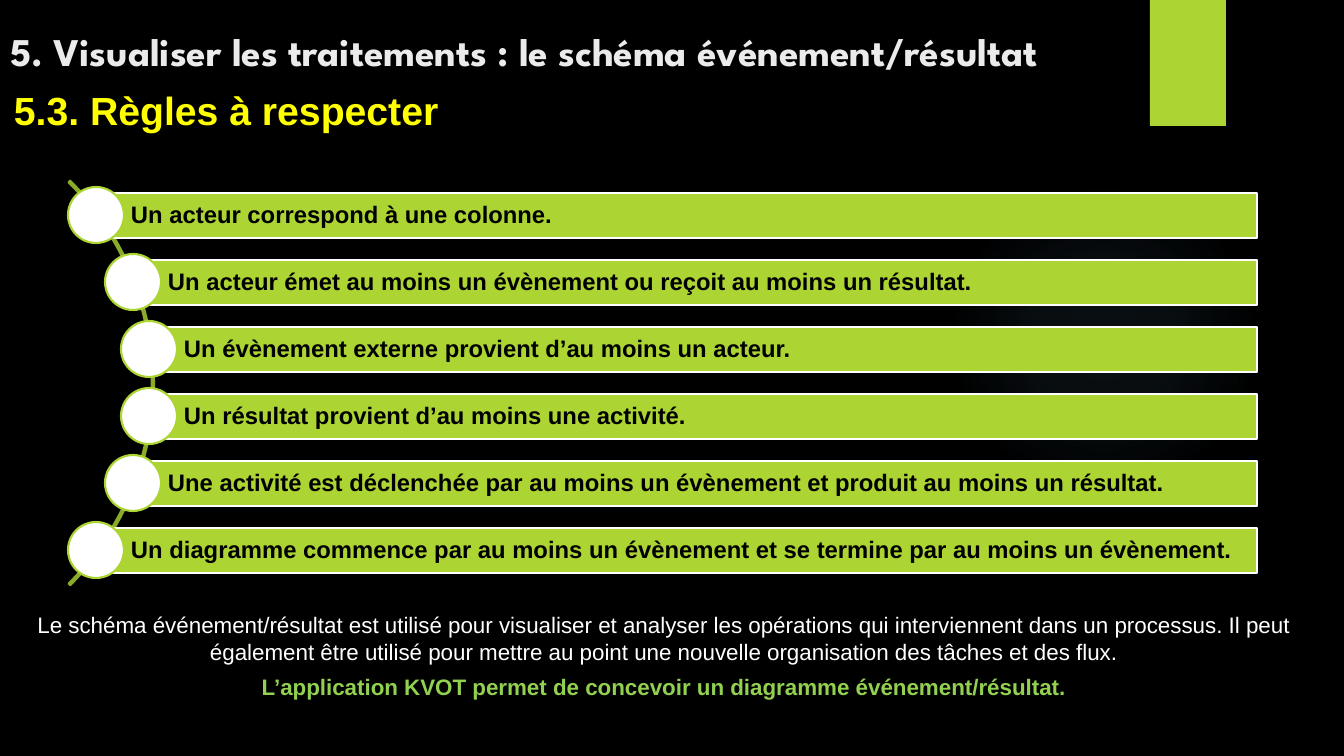
"""Build the slide on the rules of the event/result diagram."""
from dataclasses import dataclass
from math import sqrt

from lxml.etree import SubElement
from pptx import Presentation
from pptx.dml.color import RGBColor
from pptx.enum.shapes import MSO_SHAPE
from pptx.enum.text import MSO_ANCHOR, MSO_AUTO_SIZE, PP_ALIGN
from pptx.oxml.ns import qn
from pptx.util import Emu, Pt

SLIDE_WIDTH, SLIDE_HEIGHT = 1344, 756
EMU_PER_PX = 12192000 / SLIDE_WIDTH

RULES = (
    "Un acteur correspond à une colonne.",
    "Un acteur émet au moins un évènement ou reçoit au moins un résultat.",
    "Un évènement externe provient d’au moins un acteur.",
    "Un résultat provient d’au moins une activité.",
    "Une activité est déclenchée par au moins un évènement et produit au moins un résultat.",
    "Un diagramme commence par au moins un évènement et se termine par au moins un évènement.",
)
USAGE = (
    "Le schéma événement/résultat est utilisé pour visualiser et analyser les opérations "
    "qui interviennent dans un processus. Il peut également être utilisé pour mettre au point "
    "une nouvelle organisation des tâches et des flux."
)
TOOL = "L’application KVOT permet de concevoir un diagramme événement/résultat."


@dataclass(frozen=True)
class Theme:
    """Colours, fonts and type sizes of the slide."""
    black: RGBColor = RGBColor(0, 0, 0)
    white: RGBColor = RGBColor(255, 255, 255)
    title: RGBColor = RGBColor.from_string("EBEBEB")
    section: RGBColor = RGBColor.from_string("FFFF00")
    lime: RGBColor = RGBColor.from_string("ACD433")
    olive: RGBColor = RGBColor.from_string("8AAA29")
    green: RGBColor = RGBColor.from_string("92D050")
    glow: RGBColor = RGBColor.from_string("7AC4F0")
    display: str = "League Spartan"
    text: str = "Arial"
    heading_size: int = 28
    rule_size: int = 17
    note_size: int = 16
    line_width: float = 1.5


@dataclass(frozen=True)
class Box:
    """An area of the slide in px."""
    left: int
    top: int
    width: int
    height: int

    def emu(self):
        """Return the area as lengths in EMU."""
        return [px(n) for n in (self.left, self.top, self.width, self.height)]


THEME = Theme()


def px(length):
    """Turn px into EMU."""
    return Emu(round(length * EMU_PER_PX))


def place(shape, box):
    """Move a shape into a box."""
    shape.left, shape.top, shape.width, shape.height = box.emu()


def write(paragraph, text, size, color, name=THEME.text, bold=True):
    """Fill a paragraph and format it."""
    paragraph.text = text
    font = paragraph.font
    font.size, font.name, font.bold = Pt(size), name, bold
    font.color.rgb = color


def add_figure(slide, kind, box, fill=None, line=None):
    """Add a flat preset shape with an optional fill and line."""
    figure = slide.shapes.add_shape(kind, *box.emu())
    figure.shadow.inherit = False
    if fill is None:
        figure.fill.background()
    else:
        figure.fill.solid()
        figure.fill.fore_color.rgb = fill
    if line is None:
        figure.line.fill.background()
    else:
        figure.line.color.rgb = line
        figure.line.width = Pt(THEME.line_width)
    return figure


def add_glow(slide, box):
    """Add the faint radial glow behind the rules."""
    glow = add_figure(slide, MSO_SHAPE.OVAL, box)
    glow.fill.gradient()
    gradient = glow.fill._xPr.find(qn("a:gradFill"))
    for child in list(gradient):
        gradient.remove(child)
    stops = SubElement(gradient, qn("a:gsLst"))
    for position, alpha in ((0, 7), (36, 6), (69, 0)):
        stop = SubElement(stops, qn("a:gs"), pos=str(position * 1000))
        color = SubElement(stop, qn("a:srgbClr"), val=str(THEME.glow))
        SubElement(color, qn("a:alpha"), val=str(alpha * 1000))
    circle = SubElement(gradient, qn("a:path"), path="circle")
    SubElement(circle, qn("a:fillToRect"), l="50000", t="50000", r="50000", b="50000")


def add_headings(slide, box):
    """Place the chapter title and the section heading below it."""
    title = slide.shapes.title
    place(title, Box(box.left, box.top, box.width, 76))
    section = slide.shapes.add_textbox(
        *Box(box.left + 4, box.top + 78, box.width - 59, 57).emu())
    for heading, anchor in ((title, MSO_ANCHOR.BOTTOM), (section, MSO_ANCHOR.MIDDLE)):
        frame = heading.text_frame
        frame.word_wrap = True
        frame.auto_size = MSO_AUTO_SIZE.NONE
        frame.vertical_anchor = anchor
        frame.paragraphs[0].alignment = PP_ALIGN.LEFT
    write(title.text_frame.paragraphs[0],
          "5. Visualiser les traitements : le schéma événement/résultat",
          THEME.heading_size, THEME.title, THEME.display)
    write(section.text_frame.paragraphs[0], "5.3. Règles à respecter",
          THEME.heading_size, THEME.section)


def add_rule(slide, box, rule):
    """Add a bar with its rule and the disc centred on its left edge."""
    disc = 56
    bar = add_figure(slide, MSO_SHAPE.RECTANGLE, box, THEME.lime, THEME.white)
    frame = bar.text_frame
    frame.word_wrap = True
    frame.vertical_anchor = MSO_ANCHOR.MIDDLE
    frame.margin_left = px(35)
    frame.margin_top = frame.margin_right = frame.margin_bottom = px(5)
    paragraph = frame.paragraphs[0]
    paragraph.alignment = PP_ALIGN.LEFT
    paragraph.line_spacing = 0.9
    write(paragraph, rule, THEME.rule_size, THEME.black)
    disc_box = Box(box.left - disc // 2, box.top + (box.height - disc) // 2, disc, disc)
    add_figure(slide, MSO_SHAPE.OVAL, disc_box, THEME.white, THEME.lime)


def add_rules(slide, box):
    """Spread the rules evenly along an arc that bulges to the right."""
    radius, track, step, bar_height = 286, 283, 67, 45
    center_x = box.left - 200
    center_y = box.top + box.height // 2
    arc = add_figure(
        slide, MSO_SHAPE.BLOCK_ARC,
        Box(center_x - radius, center_y - radius, 2 * radius, 2 * radius),
        line=THEME.olive)
    for index, value in enumerate((189, 27, 0.004)):
        arc.adjustments[index] = value
    for index, rule in enumerate(RULES):
        offset = (index - (len(RULES) - 1) / 2) * step
        left = round(center_x + sqrt(track ** 2 - offset ** 2))
        top = round(center_y + offset - bar_height / 2)
        add_rule(slide, Box(left, top, box.left + box.width - left, bar_height), rule)


def add_notes_on_use(slide, box):
    """Fill the body with the closing remarks, centred and without bullets."""
    body = slide.placeholders[1]
    place(body, box)
    frame = body.text_frame
    frame.auto_size = MSO_AUTO_SIZE.NONE
    remarks = ((USAGE, THEME.white, False, 0), (TOOL, THEME.green, True, 6))
    for index, (text, color, bold, gap) in enumerate(remarks):
        paragraph = frame.add_paragraph() if index else frame.paragraphs[0]
        properties = paragraph._p.get_or_add_pPr()
        properties.set("marL", "0")
        properties.set("indent", "0")
        SubElement(properties, qn("a:buNone"))
        paragraph.alignment = PP_ALIGN.CENTER
        paragraph.space_before = Pt(gap)
        write(paragraph, text, THEME.note_size, color, bold=bold)


def main():
    """Build the slide and save it."""
    deck = Presentation()
    deck.slide_width, deck.slide_height = px(SLIDE_WIDTH), px(SLIDE_HEIGHT)
    slide = deck.slides.add_slide(deck.slide_layouts[1])
    slide.background.fill.solid()
    slide.background.fill.fore_color.rgb = THEME.black
    add_glow(slide, Box(949, 184, 310, 310))
    add_figure(slide, MSO_SHAPE.RECTANGLE, Box(1150, 0, 76, 126), THEME.lime)
    add_headings(slide, Box(0, 3, 1268, 135))
    add_rules(slide, Box(68, 181, 1189, 404))
    add_notes_on_use(slide, Box(26, 606, 1276, 100))
    deck.save("out.pptx")


if __name__ == "__main__":
    main()
